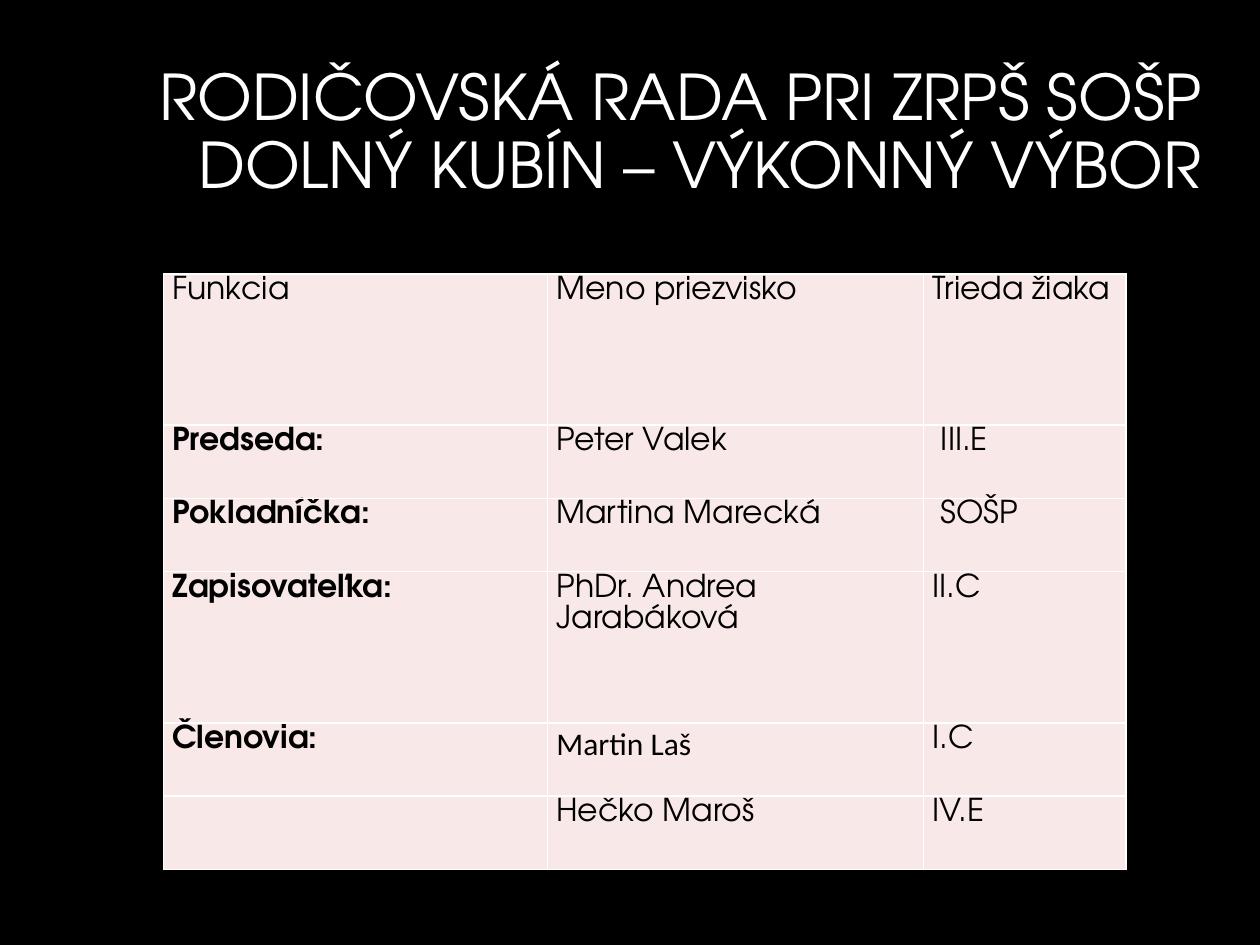
import pptx
import pptx.dml.color
import pptx.enum.text
import pptx.oxml
import pptx.oxml.ns
import pptx.util
from pptx.util import Pt

COLORS = {"background": "000000", "title": "FFFFFF", "cell": "F9E8E8",
          "text": "000000", "border": "FFFFFF"}
FONT = "TeX Gyre Adventor"
NAME_FONTS = {"Martin Laš": "Calibri"}

COLUMN_WIDTHS = [219.5, 214.75, 115.75]
TALL_ROW, SHORT_ROW = 86.4, 41.9
COMMITTEE = [
    ("Funkcia", "Meno priezvisko", "Trieda žiaka"),
    ("Predseda:", "Peter Valek", "III.E"),
    ("Pokladníčka:", "Martina Marecká", "SOŠP"),
    ("Zapisovateľka:", "PhDr. Andrea Jarabáková", "II.C"),
    ("Členovia:", "Martin Laš", "I.C"),
    ("", "Hečko Maroš", "IV.E"),
]
TALL_ROWS = {0, 3}
INDENTED_CLASSES = {"III.E", "SOŠP"}


def rgb(name):
    return pptx.dml.color.RGBColor.from_string(COLORS[name])


def add_run(paragraph, text, size, color, font=FONT, bold=False):
    run = paragraph.add_run()
    run.text = text
    run.font.size = Pt(size)
    run.font.name = font
    run.font.bold = bold
    run.font.color.rgb = rgb(color)


def add_borders(cell):
    """Draw a thin line on all four sides, ahead of the cell's fill."""
    properties = cell._tc.get_or_add_tcPr()
    for index, side in enumerate(("lnL", "lnR", "lnT", "lnB")):
        properties.insert(index, pptx.oxml.parse_xml(
            f'<a:{side} {pptx.oxml.ns.nsdecls("a")} w="{Pt(1)}"><a:solidFill>'
            f'<a:srgbClr val="{COLORS["border"]}"/></a:solidFill></a:{side}>'))


def place_title(slide, left, top, width, height):
    title = slide.shapes.title
    title.left, title.top = Pt(left), Pt(top)
    title.width, title.height = Pt(width), Pt(height)
    frame = title.text_frame
    frame.word_wrap = True
    frame.auto_size = pptx.enum.text.MSO_AUTO_SIZE.NONE
    frame.vertical_anchor = pptx.enum.text.MSO_ANCHOR.MIDDLE
    paragraph = frame.paragraphs[0]
    paragraph.alignment = pptx.enum.text.PP_ALIGN.RIGHT
    paragraph.line_spacing = 0.9
    add_run(paragraph, "RODIČOVSKÁ RADA PRI ZRPŠ SOŠP DOLNÝ KUBÍN – VÝKONNÝ VÝBOR",
            36, "title")


def fill_cell(cell, text, bold):
    cell.margin_left = cell.margin_right = Pt(5)
    cell.margin_top = cell.margin_bottom = Pt(0)
    cell.fill.solid()
    cell.fill.fore_color.rgb = rgb("cell")
    add_borders(cell)
    paragraph = cell.text_frame.paragraphs[0]
    paragraph.line_spacing = 1.07
    paragraph.space_after = Pt(8)
    if text in INDENTED_CLASSES:
        paragraph._p.get_or_add_pPr().set("marL", str(Pt(5)))
    if text:
        add_run(paragraph, text, 18, "text", NAME_FONTS.get(text, FONT), bold)


def place_committee(slide, left, top, width, height):
    table = slide.shapes.add_table(len(COMMITTEE), len(COLUMN_WIDTHS), Pt(left),
                                   Pt(top), Pt(width), Pt(height)).table
    table.first_row = table.horz_banding = False
    for column, column_width in zip(table.columns, COLUMN_WIDTHS):
        column.width = Pt(column_width)
    for r, member in enumerate(COMMITTEE):
        table.rows[r].height = Pt(TALL_ROW if r in TALL_ROWS else SHORT_ROW)
        for c, text in enumerate(member):
            # Roles are bold below the heading row
            fill_cell(table.cell(r, c), text, bold=r > 0 and c == 0)


def main():
    presentation = pptx.Presentation()
    presentation.slide_width, presentation.slide_height = Pt(720), Pt(540)
    slide = presentation.slides.add_slide(presentation.slide_layouts[5])
    slide.background.fill.solid()
    slide.background.fill.fore_color.rgb = rgb("background")
    # Heading
    place_title(slide, 36.5, 26, 657.5, 101.5)
    # Committee members
    place_committee(slide, 93.5, 156.5, sum(COLUMN_WIDTHS), 340.4)
    presentation.save("out.pptx")


if __name__ == "__main__":
    main()
